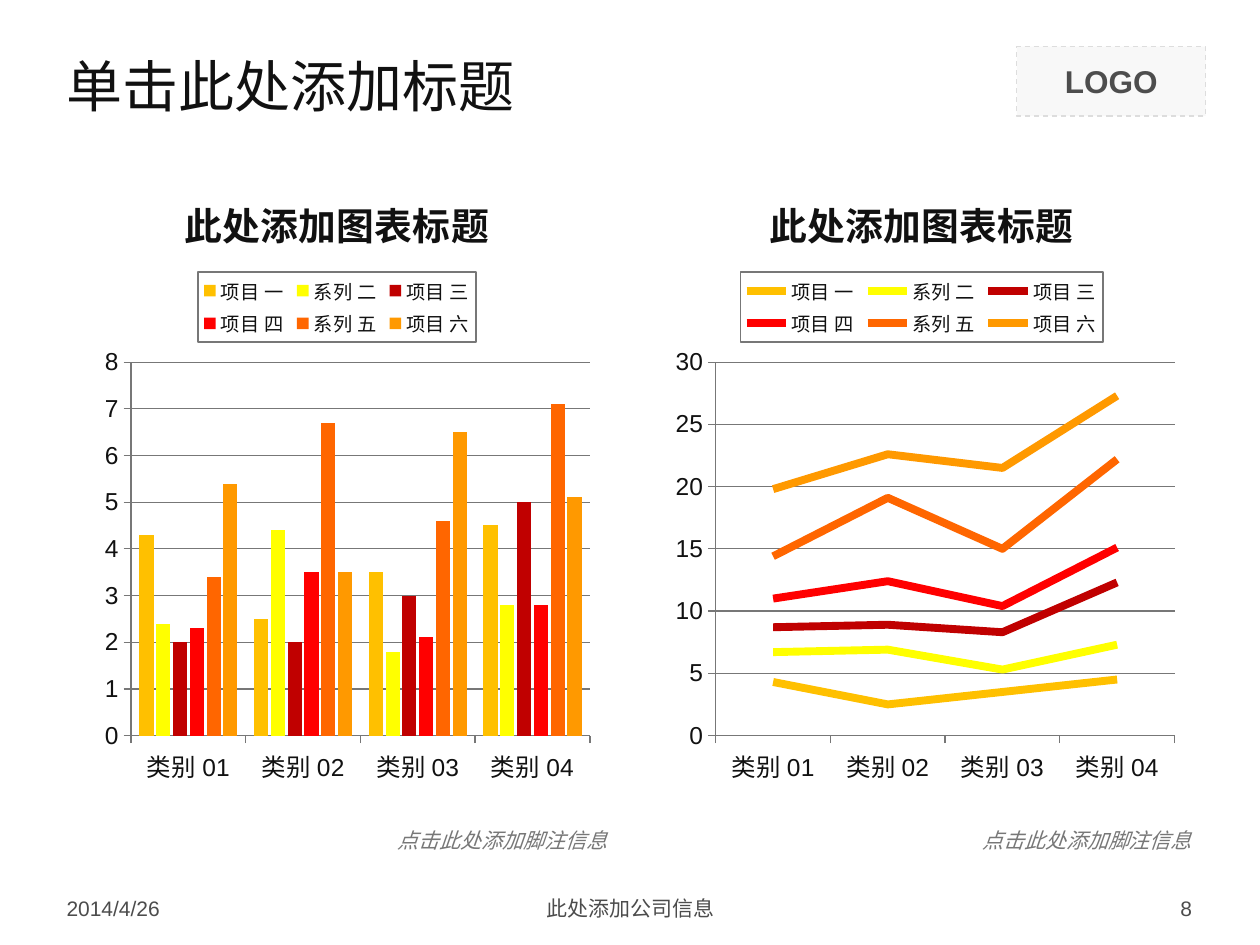
import pptx
import pptx.chart.data
import pptx.dml.color
import pptx.enum.chart
import pptx.enum.dml
import pptx.enum.shapes
import pptx.enum.text
import pptx.oxml
import pptx.util

Inches, Pt = pptx.util.Inches, pptx.util.Pt
ALIGN = pptx.enum.text.PP_ALIGN
ANCHOR = pptx.enum.text.MSO_ANCHOR
CHART_TYPE = pptx.enum.chart.XL_CHART_TYPE

INK, GREY, FOOTER = "111111", "777777", "4C4C4C"
MARGIN, RIGHT = 0.43, 9.56
CHART_WIDTH, CHART_HEIGHT, CHART_TOP = 4.49, 5.2, 1.31
PLOT_LAYOUT = {"x": 0.136, "y": 0.301, "w": 0.811, "h": 0.57}

CATEGORIES = ["类别 01", "类别 02", "类别 03", "类别 04"]
SERIES = [
    ("项目 一", (4.3, 2.5, 3.5, 4.5), "FFC000"),
    ("系列 二", (2.4, 4.4, 1.8, 2.8), "FFFF00"),
    ("项目 三", (2, 2, 3, 5), "C00000"),
    ("项目 四", (2.3, 3.5, 2.1, 2.8), "FF0000"),
    ("系列 五", (3.4, 6.7, 4.6, 7.1), "FF6600"),
    ("项目 六", (5.4, 3.5, 6.5, 5.1), "FF9900"),
]


def color(hex_string):
    return pptx.dml.color.RGBColor.from_string(hex_string)


def set_font(font, size, hex_string, name="Arial", bold=False, italic=False):
    font.size, font.name = Pt(size), name
    font.bold, font.italic = bold, italic
    font.color.rgb = color(hex_string)


def set_line(line, hex_string, width=0.75):
    line.color.rgb = color(hex_string)
    line.width = Pt(width)


def write(frame, text, size, hex_string, align=ALIGN.LEFT, **style):
    paragraph = frame.paragraphs[0]
    paragraph.alignment = align
    run = paragraph.add_run()
    run.text = text
    set_font(run.font, size, hex_string, **style)


def add_text(slide, box, text, size, hex_string, align=ALIGN.LEFT,
             anchor=ANCHOR.MIDDLE, wrap=True, **style):
    frame = slide.shapes.add_textbox(*map(Inches, box)).text_frame
    frame.word_wrap = wrap
    frame.vertical_anchor = anchor
    write(frame, text, size, hex_string, align, **style)
    return frame


def add_logo_box(slide):
    logo_box = slide.shapes.add_shape(
        pptx.enum.shapes.MSO_SHAPE.RECTANGLE,
        Inches(8.07), Inches(0.37), Inches(1.5), Inches(0.55))
    logo_box.shadow.inherit = False
    logo_box.fill.solid()
    logo_box.fill.fore_color.rgb = color("F8F8F8")
    set_line(logo_box.line, "DDDDDD")
    logo_box.line.dash_style = pptx.enum.dml.MSO_LINE.DASH
    logo_box.text_frame.vertical_anchor = ANCHOR.MIDDLE
    write(logo_box.text_frame, "LOGO", 18, "4D4D4D", ALIGN.CENTER, bold=True)


def add_xml(parent, tag, **attributes):
    child = parent.makeelement(pptx.oxml.ns.qn(tag), attributes)
    parent.append(child)
    return child


def place_plot(chart):
    plot_area = chart._chartSpace.chart.plotArea
    for old_layout in plot_area.findall(pptx.oxml.ns.qn("c:layout")):
        plot_area.remove(old_layout)
    layout = add_xml(plot_area, "c:layout")
    plot_area.insert(0, layout)
    manual = add_xml(layout, "c:manualLayout")
    add_xml(manual, "c:layoutTarget", val="inner")
    for side in "xy":
        add_xml(manual, f"c:{side}Mode", val="edge")
    for side, share in PLOT_LAYOUT.items():
        add_xml(manual, f"c:{side}", val=str(share))


def box_legend(legend):
    legend.position = pptx.enum.chart.XL_LEGEND_POSITION.TOP
    legend.include_in_layout = False
    set_font(legend.font, 11, INK)
    # The border goes before the text properties
    border = pptx.oxml.parse_xml(
        f'<c:spPr {pptx.oxml.ns.nsdecls("c", "a")}><a:ln w="9525"><a:solidFill>'
        f'<a:srgbClr val="{GREY}"/></a:solidFill></a:ln></c:spPr>')
    legend._element.find(pptx.oxml.ns.qn("c:txPr")).addprevious(border)


def style_axes(chart, top, step):
    for axis in (chart.category_axis, chart.value_axis):
        axis.major_tick_mark = pptx.enum.chart.XL_TICK_MARK.OUTSIDE
        axis.minor_tick_mark = pptx.enum.chart.XL_TICK_MARK.NONE
        set_font(axis.tick_labels.font, 14, INK)
        set_line(axis.format.line, GREY)
    values = chart.value_axis
    values.minimum_scale, values.maximum_scale, values.major_unit = 0, top, step
    values.has_major_gridlines = True
    set_line(values.major_gridlines.format.line, GREY)


def add_chart(slide, left, chart_type, top, step):
    data = pptx.chart.data.CategoryChartData()
    data.categories = CATEGORIES
    for name, values, _ in SERIES:
        data.add_series(name, values)
    chart = slide.shapes.add_chart(
        chart_type, Inches(left), Inches(CHART_TOP), Inches(CHART_WIDTH),
        Inches(CHART_HEIGHT), data).chart
    set_font(chart.font, 18, INK)
    chart.has_title = True
    write(chart.chart_title.text_frame, "此处添加图表标题", 21.6, INK,
          ALIGN.CENTER, bold=True)
    chart.chart_title.include_in_layout = False
    chart.has_legend = True
    box_legend(chart.legend)
    style_axes(chart, top, step)
    place_plot(chart)
    chart.plots[0].vary_by_categories = False
    return chart


def add_column_chart(slide, left):
    plot = add_chart(slide, left, CHART_TYPE.COLUMN_CLUSTERED, 8, 1).plots[0]
    plot.gap_width, plot.overlap = 117, -18
    for series, (_, _, hex_string) in zip(plot.series, SERIES):
        series.format.fill.solid()
        series.format.fill.fore_color.rgb = color(hex_string)


def add_line_chart(slide, left):
    plot = add_chart(slide, left, CHART_TYPE.LINE_STACKED, 30, 5).plots[0]
    for series, (_, _, hex_string) in zip(plot.series, SERIES):
        series.smooth = False
        series.marker.style = pptx.enum.chart.XL_MARKER_STYLE.NONE
        set_line(series.format.line, hex_string, 4.5)


def main():
    deck = pptx.Presentation()
    deck.slide_width, deck.slide_height = Inches(10), Inches(7.5)
    slide = deck.slides.add_slide(deck.slide_layouts[6])

    # Header
    add_logo_box(slide)
    add_text(slide, (MARGIN, 0.28, 9.14, 0.79), "单击此处添加标题", 32, INK,
             name="Montserrat")

    # Footer
    for left, width, text, align in (
            (MARGIN, 2.33, "2014/4/26", ALIGN.LEFT),
            (3.42, 3.17, "此处添加公司信息", ALIGN.CENTER),
            (7.23, 2.33, "8", ALIGN.RIGHT)):
        add_text(slide, (left, 7.06, width, 0.29), text, 12, FOOTER, align)

    # Charts, each with a footnote at its right edge
    for left, add_plot in ((MARGIN, add_column_chart),
                           (RIGHT - CHART_WIDTH, add_line_chart)):
        add_plot(slide, left)
        note = add_text(slide, (left + CHART_WIDTH - 1.88, 6.52, 1.88, 0.3),
                        "点击此处添加脚注信息", 12, GREY, ALIGN.RIGHT,
                        ANCHOR.TOP, wrap=False, italic=True)
        note.auto_size = pptx.enum.text.MSO_AUTO_SIZE.SHAPE_TO_FIT_TEXT

    deck.save("out.pptx")


if __name__ == "__main__":
    main()
